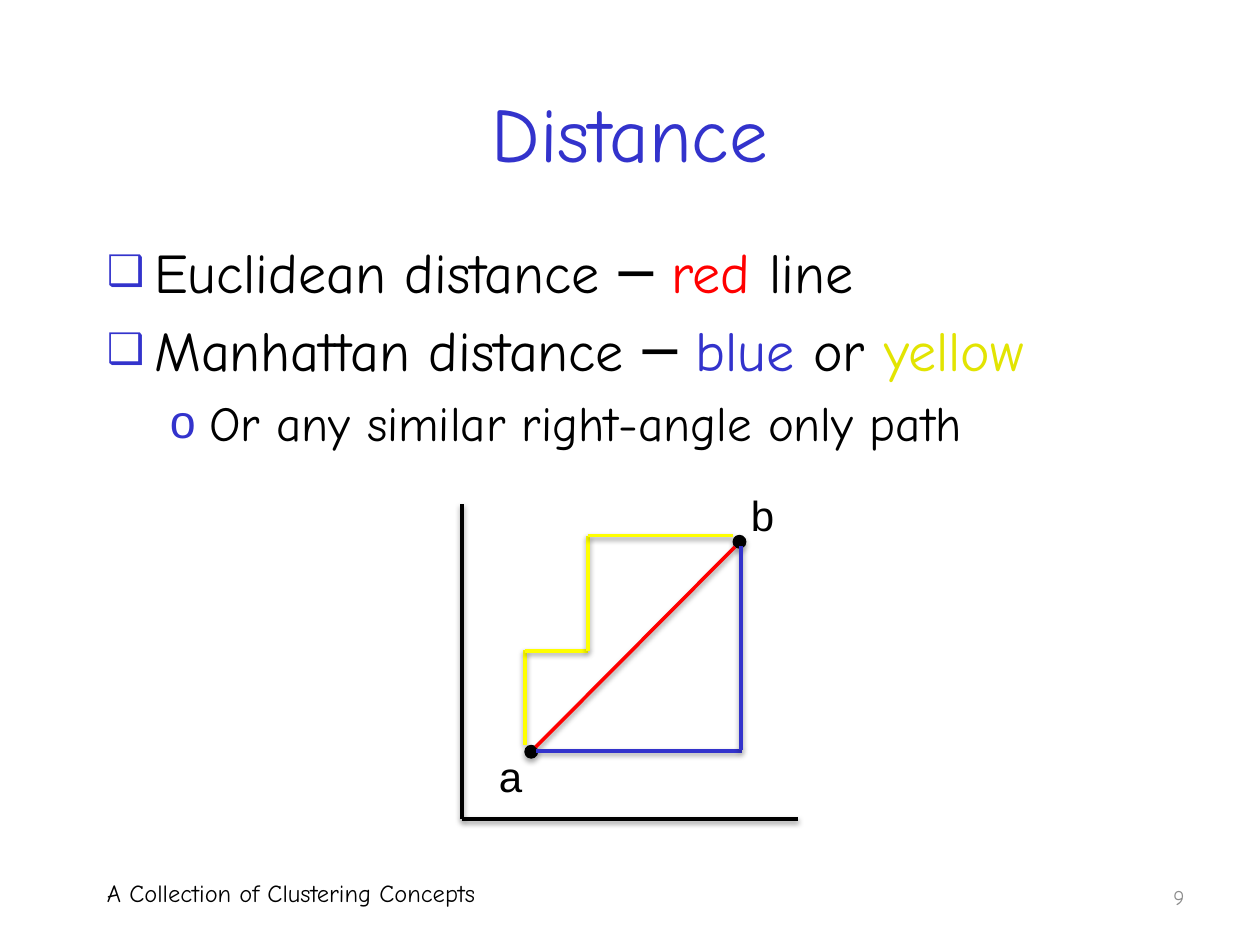
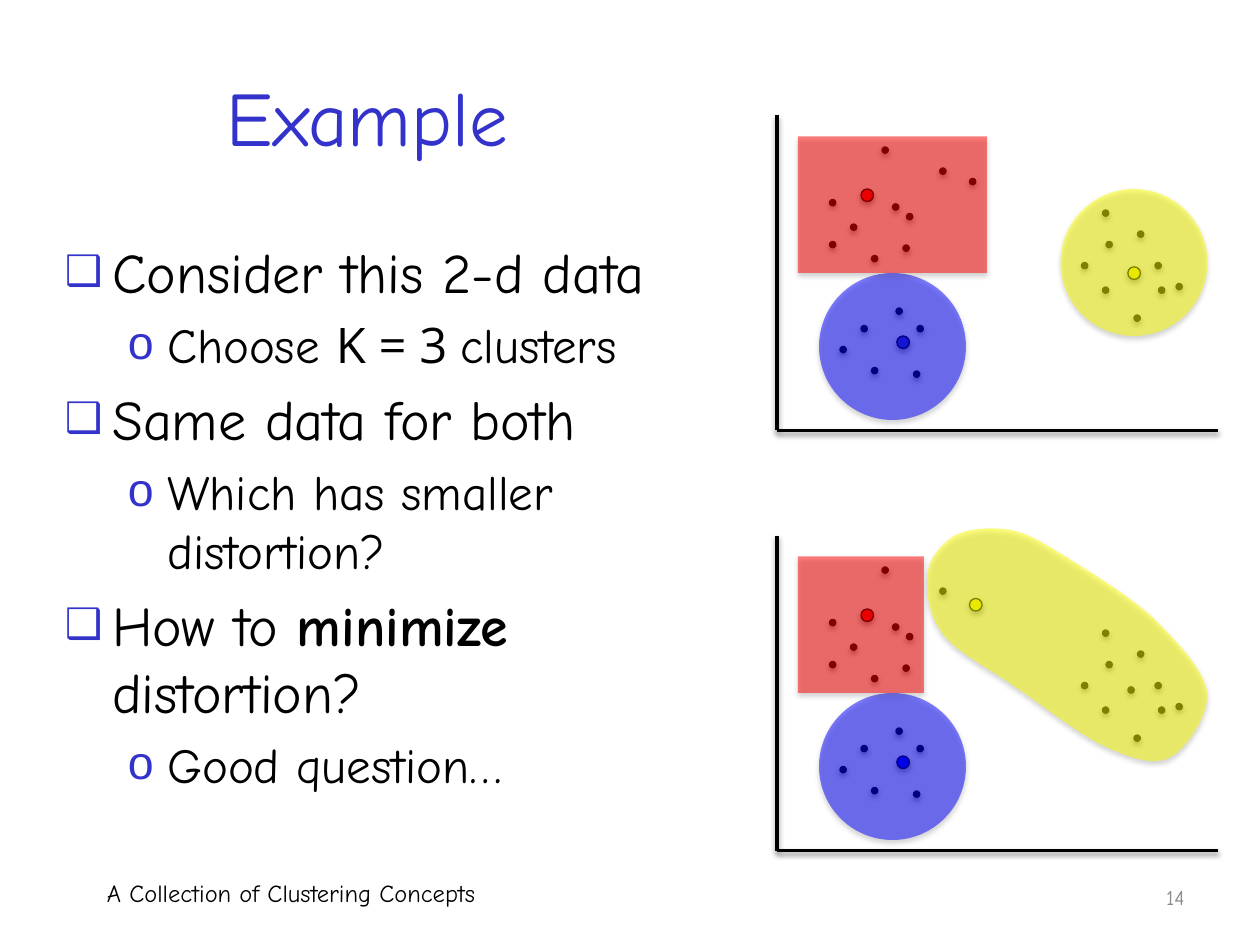
import pptx
import pptx.util
import pptx.dml.color
import pptx.enum.shapes
import pptx.enum.text
import pptx.oxml.ns
import lxml.etree

Pt = pptx.util.Pt
RGBColor = pptx.dml.color.RGBColor
qn = pptx.oxml.ns.qn
OVAL = pptx.enum.shapes.MSO_SHAPE.OVAL
RECTANGLE = pptx.enum.shapes.MSO_SHAPE.RECTANGLE
STRAIGHT = pptx.enum.shapes.MSO_CONNECTOR.STRAIGHT
LEFT = pptx.enum.text.PP_ALIGN.LEFT
CENTER = pptx.enum.text.PP_ALIGN.CENTER
RIGHT = pptx.enum.text.PP_ALIGN.RIGHT
TOP = pptx.enum.text.MSO_ANCHOR.TOP
MIDDLE = pptx.enum.text.MSO_ANCHOR.MIDDLE

BLACK = RGBColor(0x00, 0x00, 0x00)
GRAY = RGBColor(0x8C, 0x8C, 0x8C)
INDIGO = RGBColor(0x33, 0x33, 0xCC)
RED = RGBColor(0xFF, 0x00, 0x00)
BLUE = RGBColor(0x00, 0x00, 0xFF)
YELLOW = RGBColor(0xFF, 0xFF, 0x00)
DARK_YELLOW = RGBColor(0xE2, 0xE4, 0x02)
BODY_FONT = "Comic Neue"
LEVELS = [
    {"size": 32, "margin": 27, "hang": 27, "bullet": "❑", "percent": 75},
    {"size": 28, "margin": 58.5, "hang": 22.5, "bullet": "o", "percent": 95},
]


def add_text(page, place, paragraphs, size=32, font=BODY_FONT, color=BLACK,
             align=LEFT, anchor=TOP, wrap=True, bulleted=False):
    box = page.shapes.add_textbox(*[Pt(length) for length in place])
    frame = box.text_frame
    frame.word_wrap = wrap
    frame.vertical_anchor = anchor
    for index, (level, spans) in enumerate(paragraphs):
        para = frame.paragraphs[0] if index == 0 else frame.add_paragraph()
        para.alignment = align
        if bulleted:
            style = LEVELS[level]
            size = style["size"]
            para.level = level
            para.space_before = Pt(size * 0.2)
            properties = para._p.get_or_add_pPr()
            properties.set("marL", str(Pt(style["margin"])))
            properties.set("indent", str(-Pt(style["hang"])))
            bullet_color = lxml.etree.SubElement(properties, qn("a:buClr"))
            lxml.etree.SubElement(bullet_color, qn("a:srgbClr"), val=str(INDIGO))
            lxml.etree.SubElement(properties, qn("a:buSzPct"), val=str(style["percent"] * 1000))
            lxml.etree.SubElement(properties, qn("a:buFont"), typeface="Arial")
            lxml.etree.SubElement(properties, qn("a:buChar"), char=style["bullet"])
        for text, changes in spans:
            span = para.add_run()
            span.text = text
            span.font.size = Pt(size)
            span.font.name = changes.get("font", font)
            span.font.bold = changes.get("bold", False)
            span.font.color.rgb = changes.get("color", color)


def paint(item, fill=None, line=None, width=0.75, alpha=None):
    if fill is not None:
        item.fill.solid()
        item.fill.fore_color.rgb = fill
    if line is None:
        item.line.fill.background()
    else:
        item.line.color.rgb = line
        item.line.width = Pt(width)
    properties = item.element.spPr
    if alpha is not None:
        tint = properties.find(qn("a:solidFill")).find(qn("a:srgbClr"))
        lxml.etree.SubElement(tint, qn("a:alpha"), val=str(alpha * 1000))
    distance, opacity = (1.6, 38) if fill is None else (1.8, 35)
    effects = lxml.etree.SubElement(properties, qn("a:effectLst"))
    shadow = lxml.etree.SubElement(
        effects, qn("a:outerShdw"), blurRad=str(Pt(3.1)), dist=str(Pt(distance)),
        dir="5400000", rotWithShape="0")
    shade = lxml.etree.SubElement(shadow, qn("a:srgbClr"), val=str(BLACK))
    lxml.etree.SubElement(shade, qn("a:alpha"), val=str(opacity * 1000))


deck = pptx.Presentation()
deck.slide_width = Pt(720)
deck.slide_height = Pt(540)

slides = [
    {"title": "Distance", "title_place": (54, 30, 612, 90), "number": "9",
     "body_place": (54, 132, 618, 132),
     "body": [
         (0, [("Euclidean distance ─ ", {}), ("red", {"color": RED}), (" line", {})]),
         (0, [("Manhattan distance ─ ", {}), ("blue", {"color": INDIGO}),
              (" or ", {}), ("yellow", {"color": DARK_YELLOW})]),
         (1, [("Or any similar right-angle only path", {})]),
     ]},
    {"title": "Example", "title_place": (12, 24, 396, 84), "number": "14",
     "body_place": (30, 132, 390, 354),
     "body": [
         (0, [("Consider this 2-d data", {})]),
         (1, [("Choose ", {}), ("K = 3 ", {"font": "Open Sans"}), ("clusters", {})]),
         (0, [("Same data for both", {})]),
         (1, [("Which has smaller distortion?", {})]),
         (0, [("How to ", {}), ("minimize", {"bold": True}), (" distortion?", {})]),
         (1, [("Good question…", {})]),
     ]},
]

pages = []
for content in slides:
    page = deck.slides.add_slide(deck.slide_layouts[6])
    pages.append(page)
    add_text(page, content["title_place"], [(0, [(content["title"], {})])],
             size=44, color=INDIGO, align=CENTER, anchor=MIDDLE)
    add_text(page, content["body_place"], content["body"], bulleted=True)
    add_text(page, (54, 498, 318, 30),
             [(0, [("A Collection of Clustering Concepts", {})])], size=14)
    add_text(page, (516, 498, 168, 29), [(0, [(content["number"], {})])],
             size=12, color=GRAY, align=RIGHT, anchor=MIDDLE)

distance_page, example_page = pages

axes = [(distance_page, 264, 288, 456, 468)]
axes += [(example_page, 444, 66 + drop, 696, 246 + drop) for drop in (0, 240)]
lines = []
for page, left, top, right, bottom in axes:
    lines.append((page, BLACK, (left, top, left, bottom)))
    lines.append((page, BLACK, (left, bottom, right, bottom)))

for left, top in ((300, 426), (419, 306)):
    point = distance_page.shapes.add_shape(OVAL, Pt(left), Pt(top), Pt(7.2), Pt(7.2))
    paint(point, fill=BLACK, line=BLACK)

lines += [
    (distance_page, RED, (306, 427, 420, 312.5)),
    (distance_page, INDIGO, (306, 429, 424, 429)),
    (distance_page, INDIGO, (423.5, 312, 423.5, 428.5)),
    (distance_page, YELLOW, (300, 371.5, 300, 425.5)),
    (distance_page, YELLOW, (300, 372, 336, 372)),
    (distance_page, YELLOW, (336, 372, 336, 306)),
    (distance_page, YELLOW, (336, 306, 419, 306)),
]
for page, color, ends in lines:
    connector = page.shapes.add_connector(STRAIGHT, *[Pt(length) for length in ends])
    paint(connector, line=color, width=2)

for label, left, top in (("a", 278, 425.5), ("b", 422, 276)):
    add_text(distance_page, (left, top, 28, 36), [(0, [(label, {})])],
             size=24, font="Arial", wrap=False)

data_points = [
    (474, 114), (486, 128), (516, 140), (518, 122), (537, 96), (504, 84),
    (510, 116.5), (498, 146), (474, 138),
    (512, 176), (492, 186), (524, 186), (522, 212), (498, 210), (480, 198),
    (632, 138), (630, 164), (618, 150), (630, 120), (650, 132), (662, 164),
    (648, 180), (660, 150), (672, 162),
]
outlier = (554, 102)
yellow_middle = (644.5, 152.5)
plots = [
    {"drop": 0, "blue": INDIGO, "centroid": yellow_middle, "point": outlier, "red_width": 108},
    {"drop": 240, "blue": BLUE, "centroid": outlier, "point": yellow_middle, "red_width": 72},
]
for plot in plots:
    drop = plot["drop"]
    dots = [(spot, 3.6, BLACK) for spot in data_points + [plot["point"]]]
    dots += [((492, 108), 7.2, RED), ((512.5, 192), 7.2, plot["blue"]),
             (plot["centroid"], 7.2, YELLOW)]
    for (left, top), size, color in dots:
        dot = example_page.shapes.add_shape(OVAL, Pt(left), Pt(top + drop), Pt(size), Pt(size))
        paint(dot, fill=color, line=BLACK)

clusters = [(OVAL, 606, 108, 84, 84, YELLOW)]
for plot in plots:
    clusters.append((OVAL, 468, 156 + plot["drop"], 84, 84, BLUE))
    clusters.append((RECTANGLE, 456, 78 + plot["drop"], plot["red_width"], 78, RED))
for kind, left, top, width, height, color in clusters:
    cluster = example_page.shapes.add_shape(kind, Pt(left), Pt(top), Pt(width), Pt(height))
    paint(cluster, fill=color, alpha=50)

start = (544.3, 306.7)
curves = [
    ((537, 312), (530.6, 319.7), (529.9, 329)),
    ((529.2, 338.4), (530.6, 352), (539.3, 362.9)),
    ((547.9, 373.7), (565.9, 382.3), (581, 393.1)),
    ((596.9, 403.9), (617.8, 420.5), (632.2, 427)),
    ((647.3, 433.4), (658.8, 437.8), (668.9, 432.7)),
    ((678.2, 427.7), (691.2, 408.2), (689.8, 395.3)),
    ((687.6, 382.3), (673.2, 367.2), (659.5, 353.5)),
    ((645.1, 339.8), (618.5, 324), (604.8, 315.4)),
    ((590.4, 306.7), (584.6, 303.8), (574.6, 302.4)),
    ((563.8, 301), (551.5, 302.4), start),
]
steps = 12
outline = []
current = start
for first, second, end in curves:
    for step in range(1, steps + 1):
        t = step / steps
        outline.append(tuple(
            Pt((1 - t) ** 3 * p + 3 * (1 - t) ** 2 * t * q + 3 * (1 - t) * t ** 2 * r + t ** 3 * s)
            for p, q, r, s in zip(current, first, second, end)))
    current = end
builder = example_page.shapes.build_freeform(Pt(start[0]), Pt(start[1]))
builder.add_line_segments(outline, close=True)
paint(builder.convert_to_shape(), fill=YELLOW, alpha=50)

deck.save("out.pptx")
